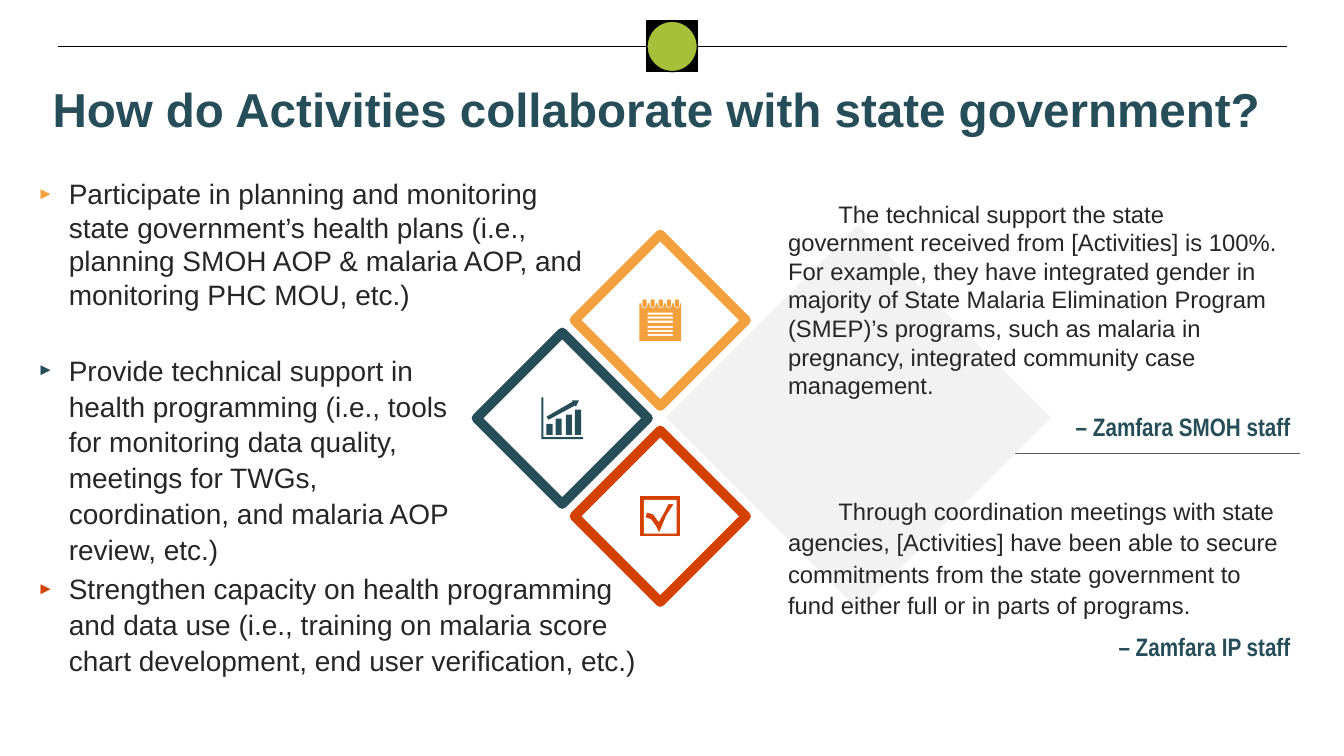
from lxml.etree import SubElement
from pptx import Presentation
from pptx.dml.color import RGBColor
from pptx.enum.shapes import MSO_CONNECTOR as CONN, MSO_SHAPE as SHAPE
from pptx.enum.text import MSO_ANCHOR as ANCHOR, MSO_AUTO_SIZE as FIT, PP_ALIGN as ALIGN
from pptx.oxml.ns import qn
from pptx.util import Cm, Pt

ORANGE, TEAL, RED = "F2A13E", "264E59", "D44102"
DARK, GREY, WHITE, BLACK, GREEN = "262626", "F2F2F2", "FFFFFF", "000000", "A7BF39"

TITLE = "How do Activities collaborate with state government?"
BULLETS = [
    ("Participate in planning and monitoring state government’s health plans "
     "(i.e., planning SMOH AOP & malaria AOP, and monitoring PHC MOU, etc.)",
     "F9A23D", (0.69, 4.32, 14.48, 3.68), 1.0),
    ("Provide technical support in health programming (i.e., tools for monitoring "
     "data quality, meetings for TWGs, coordination, and malaria AOP review, etc.)",
     TEAL, (0.69, 8.71, 11.81, 4.78), 1.07),
    ("Strengthen capacity on health programming and data use (i.e., training on "
     "malaria score chart development, end user verification, etc.)",
     RED, (0.69, 14.22, 15.65, 2.95), 1.07),
]
QUOTES = [
    ("The technical support the state government received from [Activities] is 100%. "
     "For example, they have integrated gender in majority of State Malaria "
     "Elimination Program (SMEP)’s programs, such as malaria in pregnancy, "
     "integrated community case management.",
     "– Zamfara SMOH staff", (19.61, 4.9, 13.16, 6.32), 1.0),
    ("Through coordination meetings with state agencies, [Activities] have been able "
     "to secure commitments from the state government to fund either full or in parts "
     "of programs.",
     "– Zamfara IP staff", (19.61, 12.32, 13.16, 4.45), 1.1),
]
RULES = [((1.45, 1.17), (32.44, 1.17), BLACK, 0.75),
         ((19.84, 11.43), (32.77, 11.43), "595959", 0.5)]


def box(left, top, right, bottom):
    return [(left, top), (right, top), (right, bottom), (left, bottom)]


def calendar():
    rings = [5 + 8 * i for i in range(5)]
    page = [(0, 4)]
    for x in rings:
        page += [(x - 3, 4), (x - 3, 6), (x - 2, 8), (x, 9),
                 (x + 2, 8), (x + 3, 6), (x + 3, 4)]
    page += [(41, 4), (41, 41), (0, 41)]
    pins = [[(x - 1, 0), (x + 1, 0), (x + 2, 1), (x + 2, 6), (x + 1, 8),
             (x - 1, 8), (x - 2, 6), (x - 2, 1)] for x in rings]
    lines = [box(8, 13 + 4.2 * i, 33, 15 + 4.2 * i) for i in range(6)]
    return [page, *pins, *lines]


def growth_chart():
    bars = [box(5 + 9.4 * i, 26 - 4.7 * i, 11 + 9.4 * i, 37) for i in range(4)]
    arrow = [(30, 3), (37, 3), (34, 9), (33, 8), (7, 22), (5, 19), (31, 4)]
    axes = [(0, 0), (2, 0), (2, 39), (41, 39), (41, 41), (0, 41)]
    return [*bars, arrow, axes]


def check_mark():
    hole = [(5, 5), (5, 37), (19, 37), (16, 31), (11, 24), (5, 22), (7, 16),
            (14, 18), (19, 25), (24, 16), (28, 8), (35, 8), (27, 20), (20, 37),
            (36, 37), (36, 5)]
    return [box(0, 0, 41, 41), hole]


DIAMOND, BACKDROP, ICON, STEP = 4.32, 9.7, 1.05, 2.47
HUB = (16.64, 10.54)
TILES = [(0, -1, ORANGE, calendar(), None), (-1, 0, TEAL, growth_chart(), None),
         (0, 1, RED, check_mark(), WHITE)]


def rgb(value):
    return RGBColor.from_string(value)


def paint(sp, fill, line=None, width=1):
    sp.shadow.inherit = False
    sp.fill.solid()
    sp.fill.fore_color.rgb = rgb(fill)
    if line:
        sp.line.color.rgb = rgb(line)
        sp.line.width = Pt(width)
    else:
        sp.line.fill.background()


def centred(s, kind, cx, cy, size, *style):
    sp = s.shapes.add_shape(kind, Cm(cx - size / 2), Cm(cy - size / 2), Cm(size), Cm(size))
    paint(sp, *style)


def add_icon(s, contours, cx, cy, fill, line):
    (start, *rest), *others = contours
    fb = s.shapes.build_freeform(*start, scale=Cm(ICON) / 41)
    fb.add_line_segments(rest)
    for first, *more in others:
        fb.move_to(*first)
        fb.add_line_segments(more)
    paint(fb.convert_to_shape(Cm(cx - ICON / 2), Cm(cy - ICON / 2)), fill, line)


def add_rule(s, start, end, color, width):
    ln = s.shapes.add_connector(CONN.STRAIGHT, *map(Cm, start + end))
    ln.line.color.rgb = rgb(color)
    ln.line.width = Pt(width)
    SubElement(ln._element.spPr, qn("a:effectLst"))


def place(sp, frame, anchor=ANCHOR.TOP):
    sp.left, sp.top, sp.width, sp.height = map(Cm, frame)
    tf = sp.text_frame
    tf.word_wrap = True
    tf.auto_size = FIT.NONE
    tf.vertical_anchor = anchor
    return tf


def write(p, text, size, color, bold=False, font="Arial", spacing=1.0, before=0,
          align=ALIGN.LEFT):
    p.alignment, p.line_spacing, p.space_before = align, spacing, Pt(before)
    r = p.add_run()
    r.text = text
    r.font.name, r.font.size, r.font.bold = font, Pt(size), bold
    r.font.color.rgb = rgb(color)


def indent(p, margin, first):
    pPr = p._p.get_or_add_pPr()
    pPr.set("marL", str(Cm(margin)))
    pPr.set("indent", str(Cm(first)))
    return pPr


def add_bullet(p, color):
    pPr = indent(p, 0.79, -0.79)
    SubElement(SubElement(pPr, qn("a:buClr")), qn("a:srgbClr"), val=color)
    SubElement(pPr, qn("a:buSzPct"), val="60000")
    SubElement(pPr, qn("a:buFont"), typeface="Arial")
    SubElement(pPr, qn("a:buChar"), char="►")


def main():
    prs = Presentation()
    prs.slide_width, prs.slide_height = Cm(33.87), Cm(19.05)
    s = prs.slides.add_slide(prs.slide_layouts.get_by_name("Comparison"))
    title, *bodies = list(s.placeholders)[:5]
    spare = bodies.pop()
    spare._element.getparent().remove(spare._element)

    for rule in RULES:
        add_rule(s, *rule)
    for kind, fill in ((SHAPE.RECTANGLE, BLACK), (SHAPE.OVAL, GREEN)):
        centred(s, kind, 16.94, 1.17, 1.27, fill, BLACK)

    tf = place(title, (1.07, 1.85, 31.75, 1.78), ANCHOR.MIDDLE)
    write(tf.paragraphs[0], TITLE, 34, TEAL, True)

    for sp, (text, color, frame, spacing) in zip(bodies, BULLETS):
        p = place(sp, frame).paragraphs[0]
        write(p, text, 20, DARK, spacing=spacing)
        add_bullet(p, color)

    centred(s, SHAPE.DIAMOND, 21.64, 10.52, BACKDROP, GREY)
    for col, row, color, contours, edge in TILES:
        cx, cy = HUB[0] + col * STEP, HUB[1] + row * STEP
        centred(s, SHAPE.DIAMOND, cx, cy, DIAMOND, WHITE, color, 7)
        add_icon(s, contours, cx, cy, color, edge)

    for text, source, frame, spacing in QUOTES:
        tf = place(s.shapes.add_textbox(0, 0, 0, 0), frame)
        quote, credit = tf.paragraphs[0], tf.add_paragraph()
        write(quote, text, 17, DARK, spacing=spacing)
        write(credit, source, 18, TEAL, True, "Arial Narrow", 1.1, 6, ALIGN.RIGHT)
        for p in (quote, credit):
            indent(p, 0, 1.27)

    prs.save("out.pptx")


if __name__ == "__main__":
    main()
